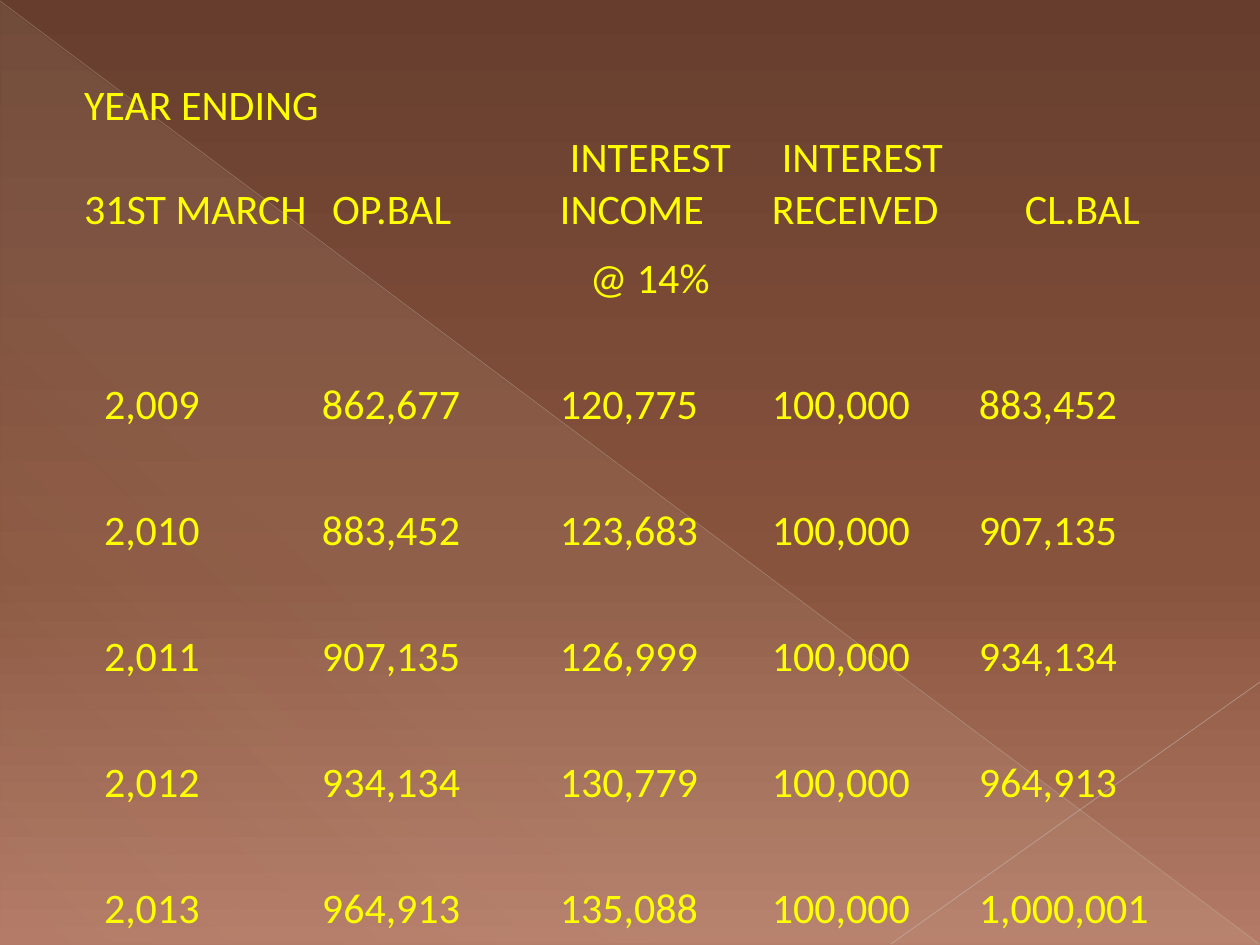
from typing import NamedTuple

import lxml.etree
import pptx
import pptx.dml.color
import pptx.enum.shapes
import pptx.enum.text
import pptx.oxml.ns
import pptx.util

EMU_PER_PX = 914400 / 126
YELLOW = "FFFF00"
SAND = "EBDDC3"
NO_STYLE = "{2D5ABB26-0587-4C30-8999-92F81FD0307C}"
qn = pptx.oxml.ns.qn


class Stop(NamedTuple):
    percent: int
    color: str
    opacity: int = 100


class Ray(NamedTuple):
    start: tuple[int, int]
    end: tuple[int, int]
    color: str
    points: float
    opacity: int


class Label(NamedTuple):
    row: int
    column: int
    text: str
    indent: int = 0
    centered: bool = False


BACKDROP = [Stop(0, "673E2E"), Stop(60, "88533D"), Stop(100, "B37B67")]
SHEEN = [Stop(0, SAND, 10), Stop(70, SAND, 8), Stop(100, SAND, 1)]
RAYS = [
    Ray((0, 1), (1259, 944), "C8BCB8", 0.39, 35),
    Ray((1260, 682), (891, 944), "CEC3BF", 0.47, 45),
]
COLUMN_WIDTHS = [248, 238, 212, 207, 209]
ROW_HEIGHTS = [69] * 3 + [126] * 5
HEADINGS = [
    Label(0, 0, "YEAR ENDING", 10),
    Label(1, 0, "31ST MARCH", 10),
    Label(1, 1, "OP.BAL", 10),
    Label(1, 2, "INTEREST INCOME", 10),
    Label(1, 3, "INTEREST RECEIVED", 10),
    Label(1, 4, "CL.BAL", centered=True),
    Label(2, 2, "@ 14%", 30),
]
BALANCES = [
    ("2,009", "862,677", "120,775", "100,000", "883,452"),
    ("2,010", "883,452", "123,683", "100,000", "907,135"),
    ("2,011", "907,135", "126,999", "100,000", "934,134"),
    ("2,012", "934,134", "130,779", "100,000", "964,913"),
    ("2,013", "964,913", "135,088", "100,000", "1,000,001"),
]


def px(length: int) -> int:
    return round(length * EMU_PER_PX)


def rgb(color: str) -> pptx.dml.color.RGBColor:
    return pptx.dml.color.RGBColor.from_string(color)


def set_opacity(color_element, percent: int) -> None:
    lxml.etree.SubElement(color_element, qn("a:alpha"), val=str(percent * 1000))


def paint_gradient(fill, owner, stops: list[Stop], angle: int) -> None:
    fill.gradient()
    gradient = owner.find(".//" + qn("a:gradFill"))
    stop_list = gradient.find(qn("a:gsLst"))
    for old_stop in list(stop_list):
        stop_list.remove(old_stop)
    for stop in stops:
        position = lxml.etree.SubElement(stop_list, qn("a:gs"), pos=str(stop.percent * 1000))
        color = lxml.etree.SubElement(position, qn("a:srgbClr"), val=stop.color)
        if stop.opacity < 100:
            set_opacity(color, stop.opacity)
    direction = gradient.find(qn("a:lin"))
    direction.set("ang", str(angle * 60000))
    direction.set("scaled", "0")


def draw_sheen(slide) -> None:
    sheen = slide.shapes.add_shape(
        pptx.enum.shapes.MSO_SHAPE.RIGHT_TRIANGLE, px(1), px(3), px(1259), px(942)
    )
    sheen.shadow.inherit = False
    sheen.line.fill.background()
    paint_gradient(sheen.fill, sheen.element.spPr, SHEEN, 133)


def draw_ray(slide, ray: Ray) -> None:
    line = slide.shapes.add_connector(
        pptx.enum.shapes.MSO_CONNECTOR.STRAIGHT, *map(px, ray.start + ray.end)
    )
    line.line.color.rgb = rgb(ray.color)
    line.line.width = pptx.util.Pt(ray.points)
    set_opacity(line.element.spPr.find(".//" + qn("a:srgbClr")), ray.opacity)
    lxml.etree.SubElement(line.element.spPr, qn("a:effectLst"))


def write_text(cell, text: str, *, indent: int = 0, centered: bool = False,
               size: int = 24, font: str = "Calibri", color: str = YELLOW) -> None:
    paragraph = cell.text_frame.paragraphs[0]
    run = paragraph.add_run()
    run.text = text
    run.font.size = pptx.util.Pt(size)
    run.font.name = font
    run.font.color.rgb = rgb(color)
    if centered:
        paragraph.alignment = pptx.enum.text.PP_ALIGN.CENTER
    if indent:
        properties = paragraph._p.get_or_add_pPr()
        properties.set("marL", "0")
        properties.set("indent", str(px(indent)))


def add_balance_table(slide):
    frame = slide.shapes.add_table(
        len(ROW_HEIGHTS), len(COLUMN_WIDTHS), px(73), px(63),
        px(sum(COLUMN_WIDTHS)), px(sum(ROW_HEIGHTS)),
    )
    table = frame.table
    table.first_row = table.horz_banding = False
    frame.element.find(".//" + qn("a:tableStyleId")).text = NO_STYLE
    for column, width in zip(table.columns, COLUMN_WIDTHS):
        column.width = px(width)
    for row, height in zip(table.rows, ROW_HEIGHTS):
        row.height = px(height)
    for cell in table.iter_cells():
        cell.fill.background()
        cell.vertical_anchor = pptx.enum.text.MSO_ANCHOR.BOTTOM
        cell.margin_left = cell.margin_right = cell.margin_top = px(1)
        cell.margin_bottom = 0
    return table


def main() -> None:
    presentation = pptx.Presentation()
    presentation.slide_width, presentation.slide_height = px(1260), px(945)
    slide = presentation.slides.add_slide(presentation.slide_layouts[6])
    paint_gradient(slide.background.fill, slide.element, BACKDROP, 90)
    draw_sheen(slide)
    for ray in RAYS:
        draw_ray(slide, ray)

    table = add_balance_table(slide)
    figures = [
        Label(row, column, amount, 30 if column == 0 else 0)
        for row, amounts in enumerate(BALANCES, start=3)
        for column, amount in enumerate(amounts)
    ]
    for label in HEADINGS + figures:
        write_text(table.cell(label.row, label.column), label.text,
                   indent=label.indent, centered=label.centered)
    presentation.save("out.pptx")


if __name__ == "__main__":
    main()
